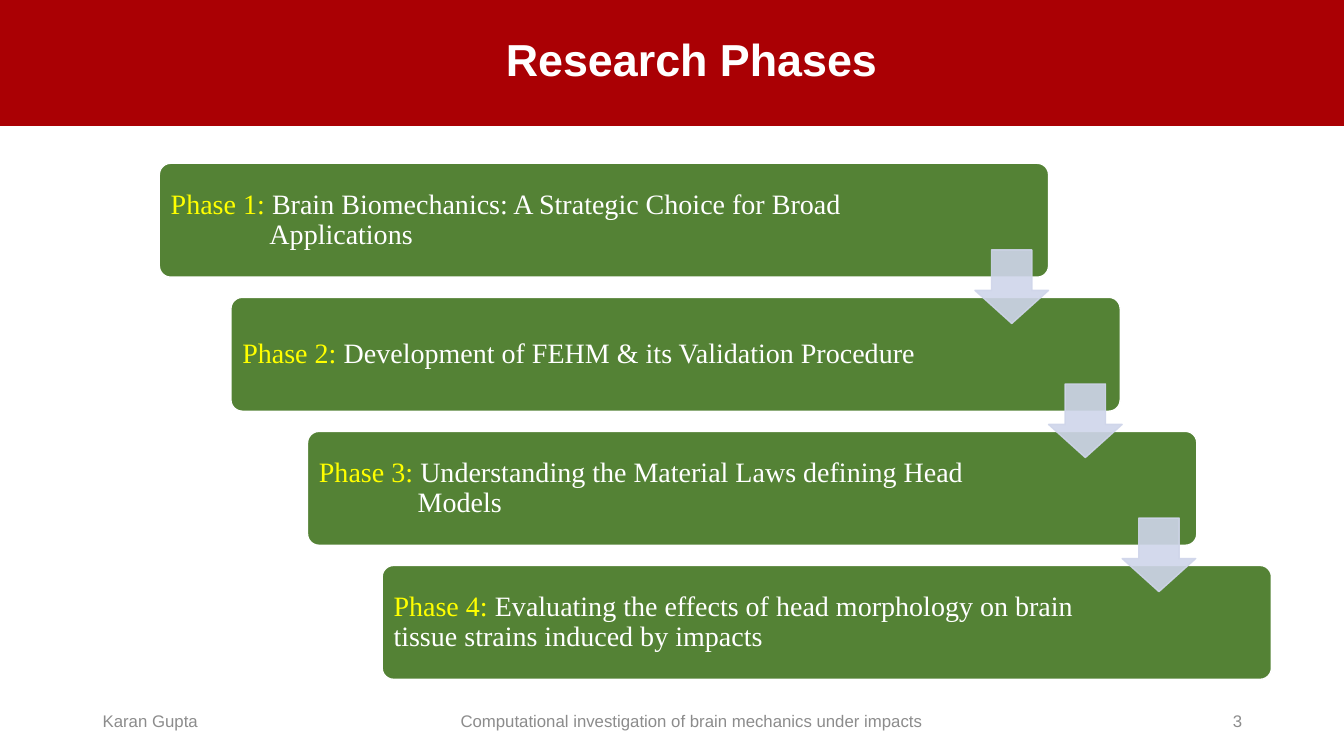
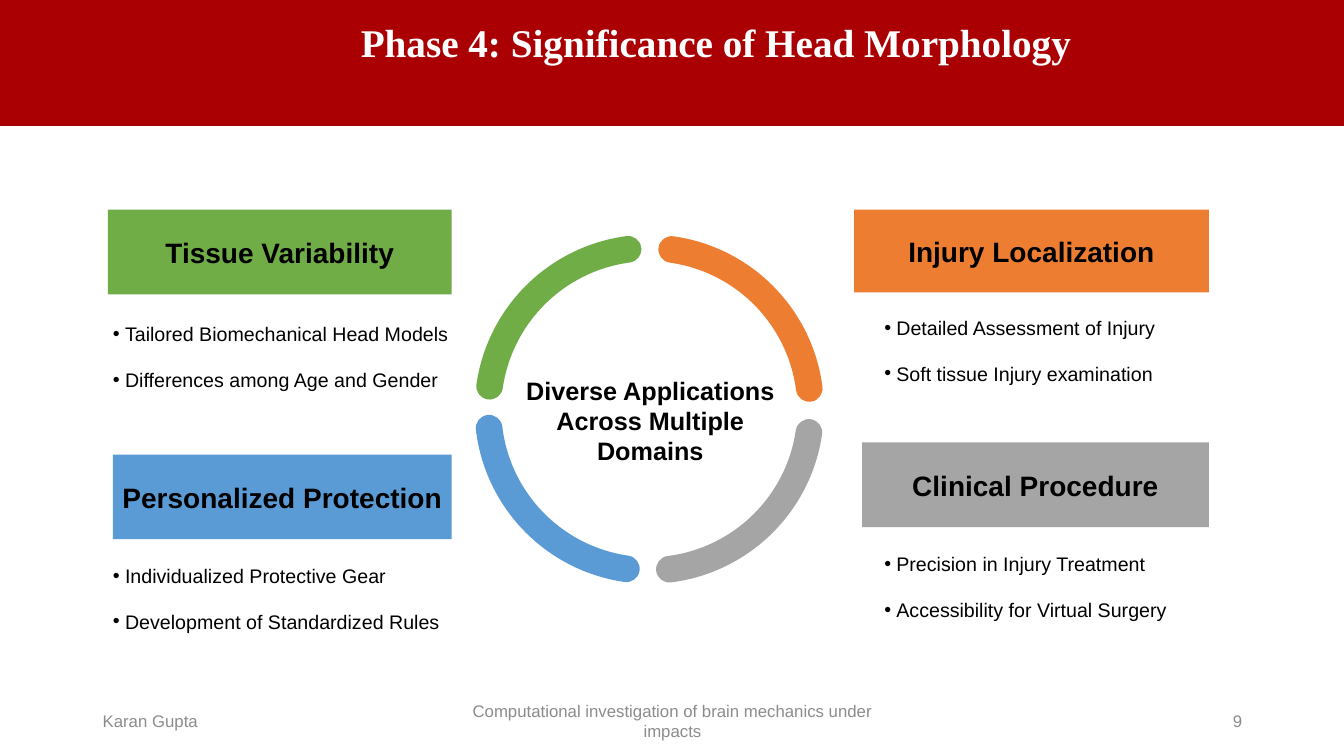
from dataclasses import dataclass
from typing import NamedTuple

from lxml import etree
from pptx import Presentation
from pptx.dml.color import RGBColor
from pptx.enum.shapes import MSO_SHAPE as SHAPE
from pptx.enum.text import MSO_ANCHOR as ANCHOR, MSO_AUTO_SIZE as AUTO, PP_ALIGN as ALIGN
from pptx.oxml.ns import qn
from pptx.util import Inches, Pt

RED, WHITE, BLACK, YELLOW = "AA0004", "FFFFFF", "000000", "FFFF00"
DARK_GREEN, PALE_BLUE, FOOTER_GRAY = "548235", "CFD5EA", "8C8C8C"
GREEN, ORANGE, BLUE, GRAY = "70AD47", "ED7D31", "5B9BD5", "A5A5A5"
SANS, SERIF = "Arial", "Times New Roman"

SLIDE_W, SLIDE_H = 13.33, 7.5
BAND_H = 1.25
AUTHOR = "Karan Gupta"
TALK = "Computational investigation of brain mechanics under impacts"

TITLE = dict(name=SANS, size=Pt(32), bold=True, color=WHITE)
SERIF_TITLE = TITLE | dict(name=SERIF, size=Pt(28))
FOOTER = dict(name=SANS, size=Pt(12), color=FOOTER_GRAY)
PHASE_TEXT = dict(name=SERIF, size=Pt(20), color=WHITE)
PHASE_LABEL = PHASE_TEXT | dict(color=YELLOW)
CARD_HEAD = dict(name=SANS, size=Pt(20), bold=True, color=BLACK)
HUB = CARD_HEAD | dict(size=Pt(18))
BULLET = dict(name=SANS, size=Pt(14), bold=False, color=BLACK)


class Box(NamedTuple):
    left: float
    top: float
    width: float
    height: float


@dataclass
class Phase:
    left: float
    text: str
    hang: float = 0


@dataclass
class Card:
    head: str
    color: str
    box: Box
    list_at: tuple[float, float]
    items: tuple[str, str]
    arc: tuple[float, float]  # start and end angle, clockwise from the right


PHASE_W, PHASE_H, PHASE_TOP, PHASE_STEP = 8.82, 1.13, 1.62, 1.33
PHASES = [
    Phase(1.58, "Brain Biomechanics: A Strategic Choice for Broad Applications", 0.98),
    Phase(2.29, "Development of FEHM & its Validation Procedure"),
    Phase(3.05, "Understanding the Material Laws defining Head Models", 0.98),
    Phase(3.79, "Evaluating the effects of head morphology on brain "
                "tissue strains induced by impacts"),
]
ARROW_LEFT, ARROW_TOP, ARROW_SIZE, ARROW_SHIFT = 9.67, 2.48, 0.73, 0.73

RING = Box(4.84, 2.46, 3.2, 3.2)
LIST_W, LIST_H = 3.36, 0.81
CARDS = [
    Card("Injury Localization", ORANGE, Box(8.47, 2.08, 3.52, 0.82), (8.77, 3.08),
         ("Detailed Assessment of Injury", "Soft tissue Injury examination"),
         (277.98, 352.62)),
    Card("Tissue Variability", GREEN, Box(1.07, 2.08, 3.41, 0.84), (1.12, 3.14),
         ("Tailored Biomechanical Head Models", "Differences among Age and Gender"),
         (188.17, 262.44)),
    Card("Personalized Protection", BLUE, Box(1.12, 4.51, 3.36, 0.84), (1.12, 5.54),
         ("Individualized Protective Gear", "Development of Standardized Rules"),
         (98.16, 173.24)),
    Card("Clinical Procedure", GRAY, Box(8.55, 4.39, 3.44, 0.84), (8.77, 5.43),
         ("Precision in Injury Treatment", "Accessibility for Virtual Surgery"),
         (8.28, 82.84)),
]


def paint(color_format, color: str) -> None:
    color_format.rgb = RGBColor.from_string(color)


def set_font(font, fmt: dict) -> None:
    for name, value in fmt.items():
        if name == "color":
            paint(font.color, value)
        else:
            setattr(font, name, value)


def add_run(p, text: str, fmt: dict) -> None:
    r = p.add_run()
    r.text = text
    set_font(r.font, fmt)


def set_frame(tf, anchor=ANCHOR.MIDDLE, **margins: float) -> None:
    """Wrap and anchor the text; margins are given in inches by side."""
    tf.word_wrap, tf.auto_size, tf.vertical_anchor = True, AUTO.NONE, anchor
    for side, value in margins.items():
        setattr(tf, f"margin_{side}", Inches(value))


def place(sp, box: Box) -> None:
    sp.left, sp.top, sp.width, sp.height = map(Inches, box)


def add_shape(slide, kind, box: Box, fill: str | None = None,
              line: str | None = None, line_w: float = 1, adjust=()):
    sp = slide.shapes.add_shape(kind, *map(Inches, box))
    sp.shadow.inherit = False
    for i, value in enumerate(adjust):
        sp.adjustments[i] = value
    if fill:
        sp.fill.solid()
        paint(sp.fill.fore_color, fill)
    else:
        sp.fill.background()
    if line:
        paint(sp.line.color, line)
        sp.line.width = Pt(line_w)
    else:
        sp.line.fill.background()
    return sp


def set_opacity(sp, percent: int) -> None:
    for clr in sp._element.spPr.iter(qn("a:srgbClr")):
        etree.SubElement(clr, qn("a:alpha")).set("val", str(percent * 1000))


def add_text(slide, box: Box, text: str, fmt: dict, align=ALIGN.LEFT,
             anchor=ANCHOR.MIDDLE) -> None:
    sp = slide.shapes.add_textbox(*map(Inches, box))
    set_frame(sp.text_frame, anchor)
    p = sp.text_frame.paragraphs[0]
    p.alignment = align
    add_run(p, text, fmt)


def set_title(slide, box: Box, text: str, fmt: dict, bottom: float = 0.05) -> None:
    sp = slide.shapes.title
    place(sp, box)
    set_frame(sp.text_frame, bottom=bottom)
    p = sp.text_frame.paragraphs[0]
    p.alignment, p.line_spacing = ALIGN.CENTER, 0.9
    add_run(p, text, fmt)


def add_footer(slide, number: int, talk_w: float) -> None:
    for left, width, text, align in (
        (0.92, 3, AUTHOR, ALIGN.LEFT),
        (4.42, talk_w, TALK, ALIGN.CENTER),
        (9.42, 3, str(number), ALIGN.RIGHT),
    ):
        add_text(slide, Box(left, 6.95, width, 0.4), text, FOOTER, align)


def add_master_band(prs, slide) -> None:
    """Draw the title band and move it to the back of the slide master."""
    band = add_shape(slide, SHAPE.RECTANGLE, Box(0, 0, SLIDE_W, BAND_H), RED)
    prs.slide_master.shapes._spTree.insert(2, band._element)


def set_indent(p, left: float, first: float):
    pPr = p._p.get_or_add_pPr()
    pPr.set("marL", str(Inches(left)))
    pPr.set("indent", str(Inches(first)))
    return pPr


def add_phase(slide, number: int, phase: Phase) -> None:
    top = PHASE_TOP + (number - 1) * PHASE_STEP
    sp = add_shape(slide, SHAPE.ROUNDED_RECTANGLE,
                   Box(phase.left, top, PHASE_W, PHASE_H), DARK_GREEN, WHITE, adjust=[0.1])
    set_frame(sp.text_frame, left=0.08, right=1.57)
    p = sp.text_frame.paragraphs[0]
    p.alignment, p.line_spacing = ALIGN.LEFT, 0.9
    set_indent(p, phase.hang, -phase.hang)
    add_run(p, f"Phase {number}: ", PHASE_LABEL)
    add_run(p, phase.text, PHASE_TEXT)


def fill_list(sp, card: Card) -> None:
    place(sp, Box(*card.list_at, LIST_W, LIST_H))
    tf = sp.text_frame
    set_frame(tf, ANCHOR.TOP, left=0, right=0, top=0.05, bottom=0.05)
    for i, item in enumerate(card.items):
        p = tf.add_paragraph() if i else tf.paragraphs[0]
        p.alignment, p.space_before = ALIGN.LEFT, Pt(16 if i else 0)
        pPr = set_indent(p, 0.12, -0.12)
        etree.SubElement(pPr, qn("a:buFont")).set("typeface", SANS)
        etree.SubElement(pPr, qn("a:buChar")).set("char", "•")
        add_run(p, item, BULLET)


def add_card(slide, card: Card, placeholder) -> None:
    # Arc adjustments count 60000 units per degree, in steps of 100000.
    arc = add_shape(slide, SHAPE.ARC, RING, line=card.color, line_w=19,
                    adjust=[angle * 0.6 for angle in card.arc])
    arc._element.spPr.find(qn("a:ln")).set("cap", "rnd")
    head = add_shape(slide, SHAPE.RECTANGLE, card.box, card.color)
    set_frame(head.text_frame, left=0, right=0)
    p = head.text_frame.paragraphs[0]
    p.alignment = ALIGN.CENTER
    add_run(p, card.head, CARD_HEAD)
    fill_list(placeholder, card)


def build_phases(slide) -> None:
    set_title(slide, Box(2.51, 0.26, 8.7, 0.72), "Research Phases", TITLE)
    for number, phase in enumerate(PHASES, 1):
        add_phase(slide, number, phase)
    for i in range(len(PHASES) - 1):
        box = Box(ARROW_LEFT + i * ARROW_SHIFT, ARROW_TOP + i * PHASE_STEP,
                  ARROW_SIZE, ARROW_SIZE)
        arrow = add_shape(slide, SHAPE.DOWN_ARROW, box, PALE_BLUE, PALE_BLUE,
                          adjust=[0.55, 0.45])
        set_opacity(arrow, 90)
    add_footer(slide, 3, 4.88)


def build_significance(slide) -> None:
    set_title(slide, Box(2.75, 0.15, 8.7, 1.03),
              "Phase 4: Significance of Head Morphology", SERIF_TITLE, bottom=0.5)
    bodies = [sp for sp in slide.placeholders if sp.placeholder_format.idx > 0]
    for card, body in zip(CARDS, bodies):
        add_card(slide, card, body)
    add_text(slide, Box(5.03, 3.67, 2.84, 1.01),
             "Diverse Applications Across Multiple Domains", HUB, ALIGN.CENTER, ANCHOR.TOP)
    add_footer(slide, 9, 4.5)


def main() -> None:
    prs = Presentation()
    prs.slide_width, prs.slide_height = Inches(SLIDE_W), Inches(SLIDE_H)
    title_only, comparison = prs.slide_layouts[5], prs.slide_layouts[4]
    phases = prs.slides.add_slide(title_only)
    add_master_band(prs, phases)
    build_phases(phases)
    build_significance(prs.slides.add_slide(comparison))
    prs.save("out.pptx")


if __name__ == "__main__":
    main()
